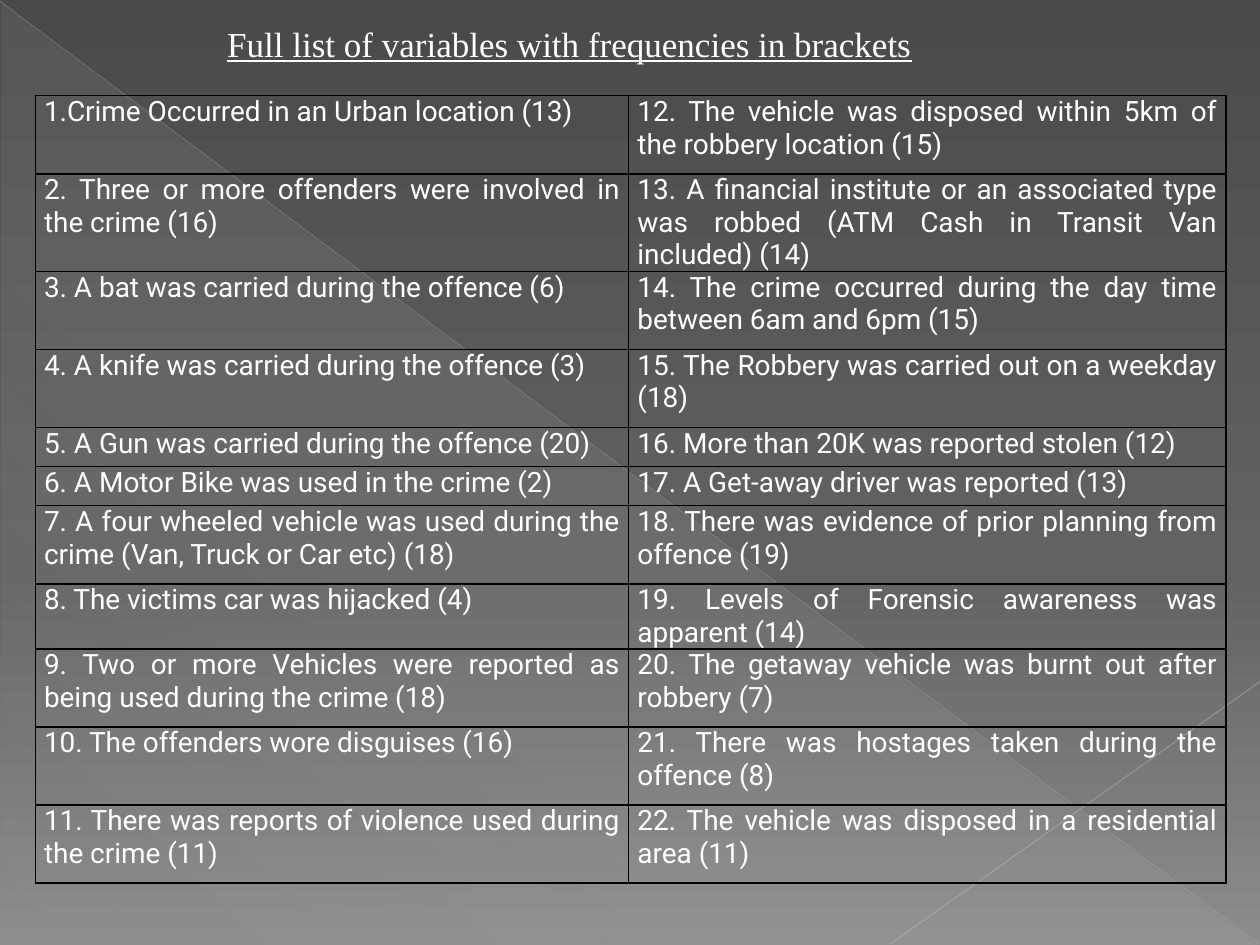
import pptx
import pptx.util
from lxml import etree
from pptx.dml.color import RGBColor
from pptx.enum.shapes import MSO_CONNECTOR, MSO_SHAPE
from pptx.enum.text import MSO_ANCHOR, PP_ALIGN
from pptx.oxml.ns import qn
from pptx.util import Inches

WHITE = RGBColor(0xFF, 0xFF, 0xFF)
BLACK = RGBColor(0x00, 0x00, 0x00)
DARK_GREY = RGBColor(0x4A, 0x4A, 0x4A)
MID_GREY = RGBColor(0x62, 0x62, 0x62)
LIGHT_GREY = RGBColor(0x8C, 0x8C, 0x8C)
PALE_GREY = RGBColor(0xD2, 0xD2, 0xD2)
LONG_LINE_GREY = RGBColor(0xBF, 0xBF, 0xBF)
SHORT_LINE_GREY = RGBColor(0xC6, 0xC6, 0xC6)

VARIABLES = [
    ("1.Crime Occurred in an Urban location (13)",
     "12. The vehicle was disposed within 5km of the robbery location (15)"),
    ("2. Three or more offenders were involved in the crime (16)",
     "13. A financial institute or an associated type was robbed "
     "(ATM Cash in Transit Van included) (14)"),
    ("3. A bat was carried during the offence (6)",
     "14. The crime occurred during the day time between 6am and 6pm (15)"),
    ("4. A knife was carried during the offence (3)",
     "15. The Robbery was carried out on a weekday (18)"),
    ("5. A Gun was carried during the offence (20)",
     "16. More than 20K was reported stolen (12)"),
    ("6. A Motor Bike was used in the crime (2)",
     "17. A Get-away driver was reported (13)"),
    ("7. A four wheeled vehicle was used during the crime (Van, Truck or Car etc) (18)",
     "18. There was evidence of prior planning from offence (19)"),
    ("8. The victims car was hijacked (4)",
     "19. Levels of Forensic awareness was apparent (14)"),
    ("9. Two or more Vehicles were reported as being used during the crime (18)",
     "20. The getaway vehicle was burnt out after robbery (7)"),
    ("10. The offenders wore disguises (16)",
     "21. There was hostages taken during the offence (8)"),
    ("11. There was reports of violence used during the crime (11)",
     "22. The vehicle was disposed in a residential area (11)"),
]
SHORT_ROWS = {4, 5, 7}


def add_color(parent, color, opacity=100):
    srgb = etree.SubElement(parent, qn("a:srgbClr"), val=str(color))
    if opacity < 100:
        etree.SubElement(srgb, qn("a:alpha"), val=str(opacity * 1000))


def set_gradient(fill, owner, stops, angle):
    """Stops are (position %, colour, opacity %); angle runs clockwise in degrees."""
    fill.gradient()
    gradient = next(owner.iter(qn("a:gradFill")))
    for child in list(gradient):
        gradient.remove(child)
    stop_list = etree.SubElement(gradient, qn("a:gsLst"))
    for position, color, opacity in stops:
        stop = etree.SubElement(stop_list, qn("a:gs"), pos=str(position * 1000))
        add_color(stop, color, opacity)
    etree.SubElement(gradient, qn("a:lin"), ang=str(angle * 60000), scaled="0")


prs = pptx.Presentation()
prs.slide_width, prs.slide_height = Inches(10), Inches(7.5)
slide = prs.slides.add_slide(prs.slide_layouts[5])

# Background with its faint triangle and lines
set_gradient(slide.background.fill, slide.element,
             [(0, DARK_GREY, 100), (60, MID_GREY, 100), (100, LIGHT_GREY, 100)], 90)
triangle = slide.shapes.add_shape(MSO_SHAPE.RIGHT_TRIANGLE, Inches(0.01), Inches(0.02),
                                  Inches(9.98), Inches(7.48))
triangle.shadow.inherit = False
triangle.line.fill.background()
set_gradient(triangle.fill, triangle.element,
             [(0, PALE_GREY, 10), (70, PALE_GREY, 8), (100, PALE_GREY, 1)], 133)

for x1, y1, x2, y2, color, width, opacity in [
    (0, 0.01, 9.99, 7.49, LONG_LINE_GREY, 0.39, 35),
    (10, 5.41, 7.07, 7.49, SHORT_LINE_GREY, 0.47, 45),
]:
    diagonal = slide.shapes.add_connector(MSO_CONNECTOR.STRAIGHT, Inches(x1), Inches(y1),
                                          Inches(x2), Inches(y2))
    diagonal.line.width = pptx.util.Pt(width)
    diagonal.line.fill.solid()
    diagonal.line.fill.fore_color.rgb = color
    srgb = next(diagonal.element.iter(qn("a:srgbClr")))
    etree.SubElement(srgb, qn("a:alpha"), val=str(opacity * 1000))
    etree.SubElement(diagonal.element.spPr, qn("a:effectLst"))

# Table of variables
row_heights = [0.31 if row in SHORT_ROWS else 0.62 for row in range(len(VARIABLES))]
table = slide.shapes.add_table(len(VARIABLES), 2, Inches(0.28), Inches(0.76),
                               Inches(9.45), Inches(sum(row_heights))).table
table.first_row = False
table.horz_banding = False
table.columns[0].width = Inches(4.71)
table.columns[1].width = Inches(4.74)

for row, (pair, height) in enumerate(zip(VARIABLES, row_heights)):
    table.rows[row].height = Inches(height)
    for column, variable in enumerate(pair):
        cell = table.cell(row, column)
        cell.margin_left = cell.margin_right = Inches(0.07)
        cell.margin_top = cell.margin_bottom = 0
        cell.vertical_anchor = MSO_ANCHOR.TOP
        cell.fill.background()
        paragraph = cell.text_frame.paragraphs[0]
        paragraph.alignment = PP_ALIGN.JUSTIFY
        run = paragraph.add_run()
        run.text = variable
        run.font.name = "Roboto"
        run.font.size = pptx.util.Pt(16)
        run.font.color.rgb = WHITE
        properties = cell._tc.get_or_add_tcPr()
        for index, side in enumerate(("lnL", "lnR", "lnT", "lnB")):
            border = etree.Element(qn("a:" + side), w=str(pptx.util.Pt(1)))
            add_color(etree.SubElement(border, qn("a:solidFill")), BLACK)
            properties.insert(index, border)

# Title
title = slide.shapes.title
title.left, title.top = Inches(1.69), Inches(-0.55)
title.width, title.height = Inches(5.66), Inches(1.41)
heading = title.text_frame
heading.word_wrap = True
heading.vertical_anchor = MSO_ANCHOR.BOTTOM
heading.margin_bottom = Inches(0.35)
heading.paragraphs[0].alignment = PP_ALIGN.CENTER
run = heading.paragraphs[0].add_run()
run.text = "Full list of variables with frequencies in brackets"
run.font.name = "Times New Roman"
run.font.size = pptx.util.Pt(20)
run.font.underline = True
run.font.color.rgb = WHITE

prs.save("out.pptx")
